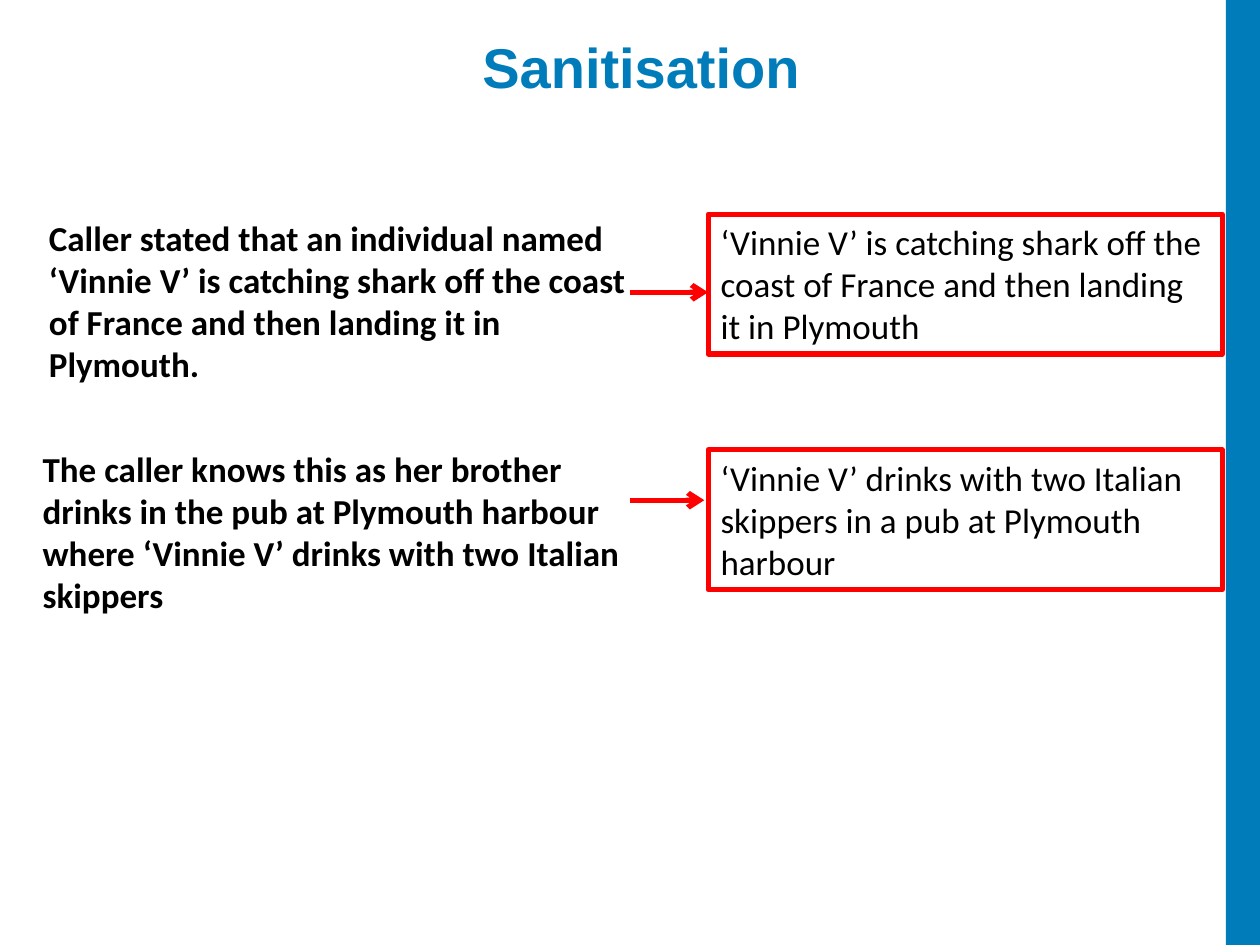
from lxml import etree
from pptx import Presentation
from pptx import util as u
from pptx.dml.color import RGBColor
from pptx.enum import shapes, text
from pptx.oxml.ns import qn

COLOURS = {"blue": "007CBA", "red": "FF0000", "black": "000000", "white": "FFFFFF"}
# Grid: 100 columns and 75 rows, so one unit is a tenth of an inch
UNIT = u.Inches(0.1)
COLUMNS, ROWS = 100, 75
LINE_WIDTH = u.Pt(3)


def colour(name):
    return RGBColor.from_string(COLOURS[name])


def grid(*values):
    return [round(value * UNIT) for value in values]


def write(shape, words, size, font, tint, bold=False, align=text.PP_ALIGN.LEFT):
    frame = shape.text_frame
    frame.word_wrap = True
    frame.vertical_anchor = text.MSO_ANCHOR.TOP
    para = frame.paragraphs[0]
    para.alignment = align
    span = para.add_run()
    span.text = words
    span.font.name, span.font.size, span.font.bold = font, u.Pt(size), bold
    span.font.color.rgb = colour(tint)


def add_rectangle(page, box):
    shape = page.shapes.add_shape(shapes.MSO_SHAPE.RECTANGLE, *grid(*box))
    shape.shadow.inherit = False
    return shape


def add_arrow(page, left, right, row):
    arrow = page.shapes.add_connector(
        shapes.MSO_CONNECTOR.STRAIGHT, *grid(left, row, right, row))
    arrow.line.color.rgb = colour("red")
    arrow.line.width = LINE_WIDTH
    properties = arrow._element.spPr
    etree.SubElement(properties.find(qn("a:ln")), qn("a:tailEnd"), type="arrow")
    etree.SubElement(properties, qn("a:effectLst"))


def side_band(page, box):
    band = add_rectangle(page, box)
    band.fill.solid()
    band.fill.fore_color.rgb = colour("blue")
    band.line.fill.background()


def title(page, box, words):
    heading = page.shapes.add_textbox(*grid(*box))
    write(heading, words, 32, "Arial", "blue", True, text.PP_ALIGN.CENTER)


def rewording(page, box, before, after, nudge, drop, tip):
    """Place the caller's words, an arrow and the sanitised words in the box."""
    left, top, width, height = box
    result_left = left + width - 40.8

    # Caller's words
    source = page.shapes.add_textbox(*grid(left + nudge, top, 50, height))
    write(source, before, 20, "Calibri", "black", bold=True)

    # Sanitised words
    result = add_rectangle(page, (result_left, top + drop, 40.8, 11.1))
    result.fill.background()
    result.line.color.rgb = colour("red")
    result.line.width = LINE_WIDTH
    write(result, after, 20, "Calibri", "black")

    # Arrow between them
    add_arrow(page, result_left - 6.2, result_left - tip[0], top + tip[1])


def main():
    deck = Presentation()
    deck.slide_width, deck.slide_height = grid(COLUMNS, ROWS)
    page = deck.slides.add_slide(deck.slide_layouts[6])
    page.background.fill.solid()
    page.background.fill.fore_color.rgb = colour("white")

    side_band(page, (97.3, 0, 2.7, ROWS))
    title(page, (5.9, 2.1, 90, 9.3), "Sanitisation")
    rewording(
        page, (2.4, 16.7, 94.6, 14.5),
        "Caller stated that an individual named ‘Vinnie V’ is catching shark "
        "off the coast of France and then landing it in Plymouth.",
        "‘Vinnie V’ is catching shark off the coast of France and then "
        "landing it in Plymouth",
        nudge=0.5, drop=0.3, tip=(0, 6.5))
    rewording(
        page, (2.4, 35, 94.6, 14.5),
        "The caller knows this as her brother drinks in the pub at Plymouth "
        "harbour where ‘Vinnie V’ drinks with two Italian skippers",
        "‘Vinnie V’ drinks with two Italian skippers in a pub at Plymouth harbour",
        nudge=0, drop=0.7, tip=(0.3, 4.7))

    deck.save("out.pptx")


if __name__ == "__main__":
    main()
